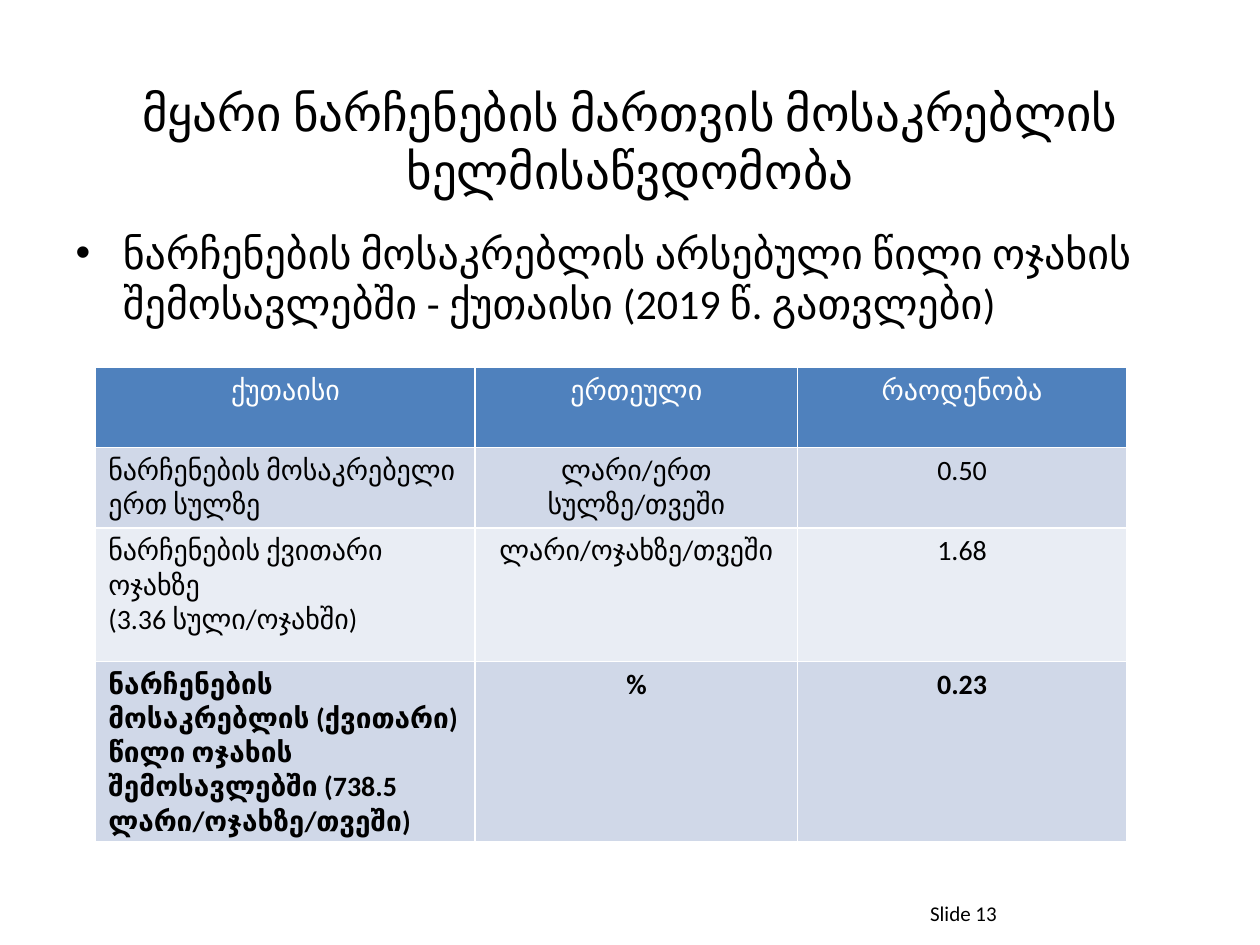
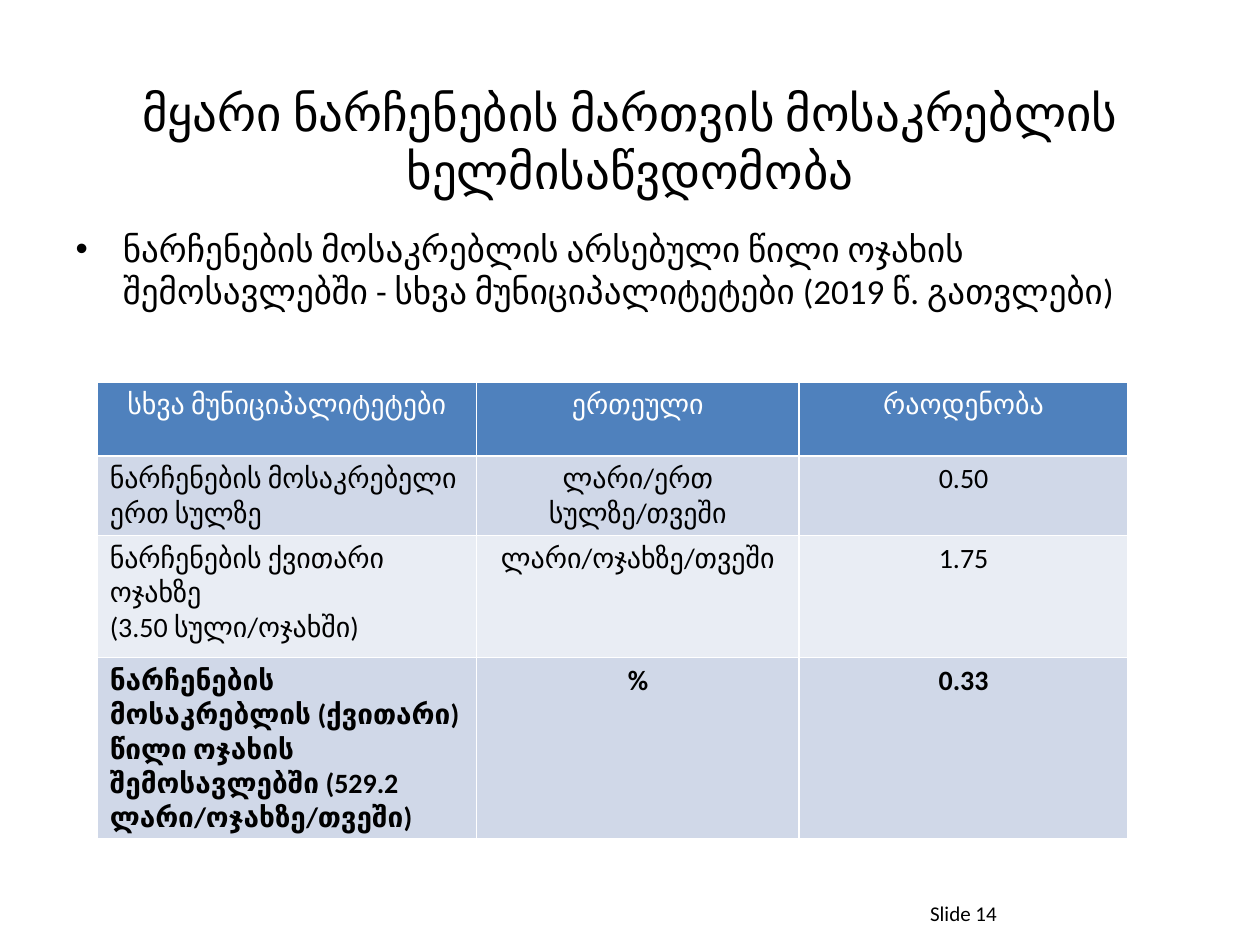
from copy import deepcopy

from pptx import Presentation
from pptx.dml.color import RGBColor
from pptx.enum.text import MSO_ANCHOR, MSO_AUTO_SIZE, PP_ALIGN
from pptx.oxml.ns import qn
from pptx.util import Cm, Pt

LEFT, MID = PP_ALIGN.LEFT, PP_ALIGN.CENTER
TOP, CENTRE = MSO_ANCHOR.TOP, MSO_ANCHOR.MIDDLE
FIXED = MSO_AUTO_SIZE.NONE

FONT = "Calibri"
COLORS = {"text": "000000", "light": "FFFFFF", "head": "4F81BD",
          "odd": "D0D8E8", "even": "E9EDF4"}

# Shared wording and measures (cm)
TITLE = "მყარი ნარჩენების მართვის მოსაკრებლის ხელმისაწვდომობა"
LEAD = "ნარჩენების მოსაკრებლის არსებული წილი ოჯახის შემოსავლებში - {} (2019 წ. გათვლები)"
COLS = (7.65, 6.5, 6.63)
FIRST = 13

# What differs from slide to slide
CITIES = (
    {"name": "ქუთაისი", "size": 24, "at": (1.93, 7.4),
     "rows": (1.62, 1.62, 2.69, 3.05),
     "people": "3.36", "income": "738.5", "bill": "1.68", "share": "0.23"},
    {"name": "სხვა მუნიციპალიტეტები", "size": 20, "at": (1.96, 7.7),
     "rows": (1.49, 1.49, 2.46, 2.8),
     "people": "3.50", "income": "529.2", "bill": "1.75", "share": "0.33"},
)


def color(name):
    return RGBColor.from_string(COLORS[name])


def write(frame, text, size=16, ink="text", bold=False, align=LEFT, anchor=TOP):
    """Fill a text frame with one paragraph; a newline becomes a line break."""
    frame.word_wrap = True
    frame.vertical_anchor = anchor
    para = frame.paragraphs[0]
    para.text = text
    para.alignment = align
    para.space_before = Pt(0)
    for run in para.runs:
        font = run.font
        font.name, font.size, font.bold = FONT, Pt(size), bold
        font.color.rgb = color(ink)
    for gap in para._p.findall(qn("a:br")):
        gap.insert(0, deepcopy(para.runs[0]._r.rPr))


def place(shape, left, top, width, height):
    shape.left, shape.top = Cm(left), Cm(top)
    shape.width, shape.height = Cm(width), Cm(height)
    shape.text_frame.auto_size = FIXED


def add_title(slide):
    place(slide.shapes.title, 1.27, 1.75, 22.86, 2.18)
    write(slide.shapes.title.text_frame, TITLE, size=28, align=MID, anchor=CENTRE)


def add_lead(slide, city):
    body = slide.placeholders[1]
    place(body, 1.27, 4.45, 22.86, 13.2)
    write(body.text_frame, LEAD.format(city["name"]), size=city["size"])


def add_number(slide, number):
    box = slide.shapes.add_textbox(Cm(18.5), Cm(18.03), Cm(4.67), Cm(0.76))
    write(box.text_frame, f"Slide {number}", size=12)


def get_rows(city):
    return (
        (city["name"], "ერთეული", "რაოდენობა"),
        ("ნარჩენების მოსაკრებელი ერთ სულზე", "ლარი/ერთ სულზე/თვეში", "0.50"),
        (f"ნარჩენების ქვითარი ოჯახზე\n({city['people']} სული/ოჯახში)",
         "ლარი/ოჯახზე/თვეში", city["bill"]),
        ("ნარჩენების მოსაკრებლის (ქვითარი) წილი ოჯახის შემოსავლებში "
         f"({city['income']} ლარი/ოჯახზე/თვეში)", "%", city["share"]),
    )


def add_fees(slide, city):
    rows = get_rows(city)
    left, top = city["at"]
    table = slide.shapes.add_table(
        len(rows), len(COLS), Cm(left), Cm(top),
        Cm(sum(COLS)), Cm(sum(city["rows"]))).table
    for col, width in zip(table.columns, COLS):
        col.width = Cm(width)
    for i, (row, height) in enumerate(zip(rows, city["rows"])):
        table.rows[i].height = Cm(height)
        head, last = i == 0, i == len(rows) - 1
        fill = "head" if head else "odd" if i % 2 else "even"
        for j, text in enumerate(row):
            cell = table.cell(i, j)
            cell.fill.solid()
            cell.fill.fore_color.rgb = color(fill)
            write(cell.text_frame, text, ink="light" if head else "text",
                  bold=last, align=MID if head or j else LEFT)


def main():
    deck = Presentation()
    deck.slide_width, deck.slide_height = Cm(25.4), Cm(19.05)
    for number, city in enumerate(CITIES, FIRST):
        slide = deck.slides.add_slide(deck.slide_layouts[1])
        add_number(slide, number)
        add_title(slide)
        add_lead(slide, city)
        add_fees(slide, city)
    deck.save("out.pptx")


if __name__ == "__main__":
    main()
